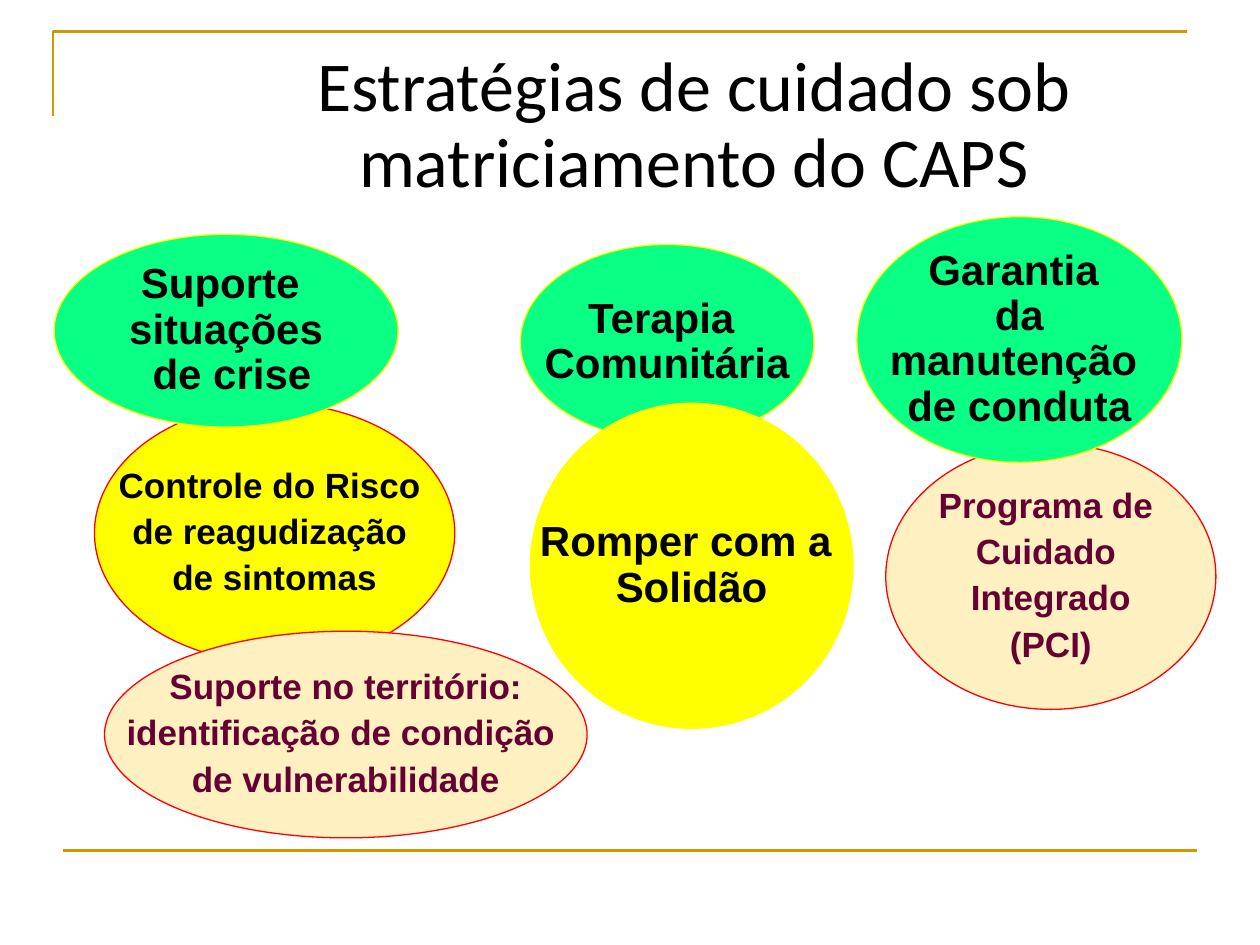
from lxml.etree import SubElement
from pptx import Presentation
from pptx.dml.color import RGBColor
from pptx.enum.shapes import MSO_CONNECTOR as Link, MSO_SHAPE as Kind
from pptx.enum.text import MSO_ANCHOR as Anchor, PP_ALIGN as Align
from pptx.oxml.ns import qn
from pptx.util import Inches, Pt

GOLD, RED, YELLOW = "CC9900", "FF0000", "FFFF00"
GREEN, CREAM, PLUM, BLACK = "0AFF85", "FFF0C2", "660033", "000000"

BIG = {"name": "Arial", "size": Pt(24), "bold": True}
SMALL = {"name": "Arial", "size": Pt(20), "bold": True}
HEAD = {"name": "Calibri", "size": Pt(40), "bold": False}
TIGHT = {"alignment": Align.CENTER, "line_spacing": 0.9, "space_before": Pt(0)}
LOOSE = {**TIGHT, "space_before": Pt(4.8)}

OVALS = [
    ((0.75, 3.2, 2.86, 2.06), YELLOW, RED, BLACK, SMALL, LOOSE,
     ["Controle do Risco ", "de reagudização ", "de sintomas"]),
    ((0.83, 5.01, 3.83, 1.64), CREAM, RED, PLUM, SMALL, LOOSE,
     ["Suporte no território:", "identificação de condição ", "de vulnerabilidade"]),
    ((7.03, 3.52, 2.62, 2.11), CREAM, RED, PLUM, SMALL, LOOSE,
     ["Programa de ", "Cuidado ", "Integrado", "(PCI)"]),
    ((4.13, 1.94, 2.33, 1.55), GREEN, YELLOW, BLACK, BIG, TIGHT,
     ["Terapia ", "Comunitária"]),
    ((0.43, 1.86, 2.73, 1.53), GREEN, YELLOW, BLACK, BIG, TIGHT,
     ["Suporte ", "situações", " de crise"]),
    ((6.8, 1.72, 2.58, 1.95), GREEN, YELLOW, BLACK, BIG, TIGHT,
     ["Garantia ", "da", "manutenção ", "de conduta"]),
    ((4.21, 3.2, 2.56, 2.58), YELLOW, YELLOW, BLACK, BIG, TIGHT,
     ["Romper com a ", "Solidão"]),
]


def paint(part, tone):
    """Give a fill or font a solid colour."""
    if hasattr(part, "solid"):
        part.solid()
        part = part.fore_color
    else:
        part = part.color
    part.rgb = RGBColor.from_string(tone)


def stroke(shape, tone, width):
    """Outline a shape or connector."""
    paint(shape.line.fill, tone)
    shape.line.width = Pt(width)


def write(frame, lines, tone, font, para):
    """Fill a text frame with one paragraph per line."""
    for row, line in enumerate(lines):
        item = frame.add_paragraph() if row else frame.paragraphs[0]
        for key, value in para.items():
            setattr(item, key, value)
        run = item.add_run()
        run.text = line
        for key, value in font.items():
            setattr(run.font, key, value)
        paint(run.font, tone)


def add_frame(slide, box):
    """Draw the gold corner at the top left and the rule at the foot."""
    left, top, width, height = box
    right, foot = left + width, top + height
    pen = slide.shapes.build_freeform(Inches(left), Inches(top + 0.67))
    pen.add_line_segments(
        [(Inches(left), Inches(top)), (Inches(right), Inches(top))], close=False)
    corner = pen.convert_to_shape()
    corner.fill.background()
    corner.shadow.inherit = False
    stroke(corner, GOLD, 1.5)
    shift = 0.08
    rule = slide.shapes.add_connector(
        Link.STRAIGHT, Inches(left + shift), Inches(foot),
        Inches(right + shift), Inches(foot))
    stroke(rule, GOLD, 1.5)
    SubElement(rule.element.spPr, qn("a:effectLst"))


def add_title(slide, box):
    """Set the title centred in its box, past a left margin."""
    frame = slide.shapes.add_textbox(*map(Inches, box)).text_frame
    frame.word_wrap = True
    write(frame, ["Estratégias de cuidado sob matriciamento do CAPS"],
          BLACK, HEAD, TIGHT)
    frame.margin_left = Inches(0.6)


def add_oval(slide, box, fill, edge, tone, font, para, lines):
    """Place one ellipse with its centred lines of text."""
    oval = slide.shapes.add_shape(Kind.OVAL, *map(Inches, box))
    oval.shadow.inherit = False
    paint(oval.fill, fill)
    stroke(oval, edge, 0.75)
    frame = oval.text_frame
    frame.word_wrap = False
    frame.vertical_anchor = Anchor.MIDDLE
    write(frame, lines, tone, font, para)


def main():
    """Build and save the slide."""
    deck = Presentation()
    deck.slide_width, deck.slide_height = Inches(10), Inches(7.5)
    slide = deck.slides.add_slide(deck.slide_layouts[6])
    add_frame(slide, (0.42, 0.25, 9, 6.5))
    first, *rest = OVALS
    add_oval(slide, *first)
    add_title(slide, (0.51, 0.36, 9.49, 1.33))
    for oval in rest:
        add_oval(slide, *oval)
    deck.save("out.pptx")


if __name__ == "__main__":
    main()
